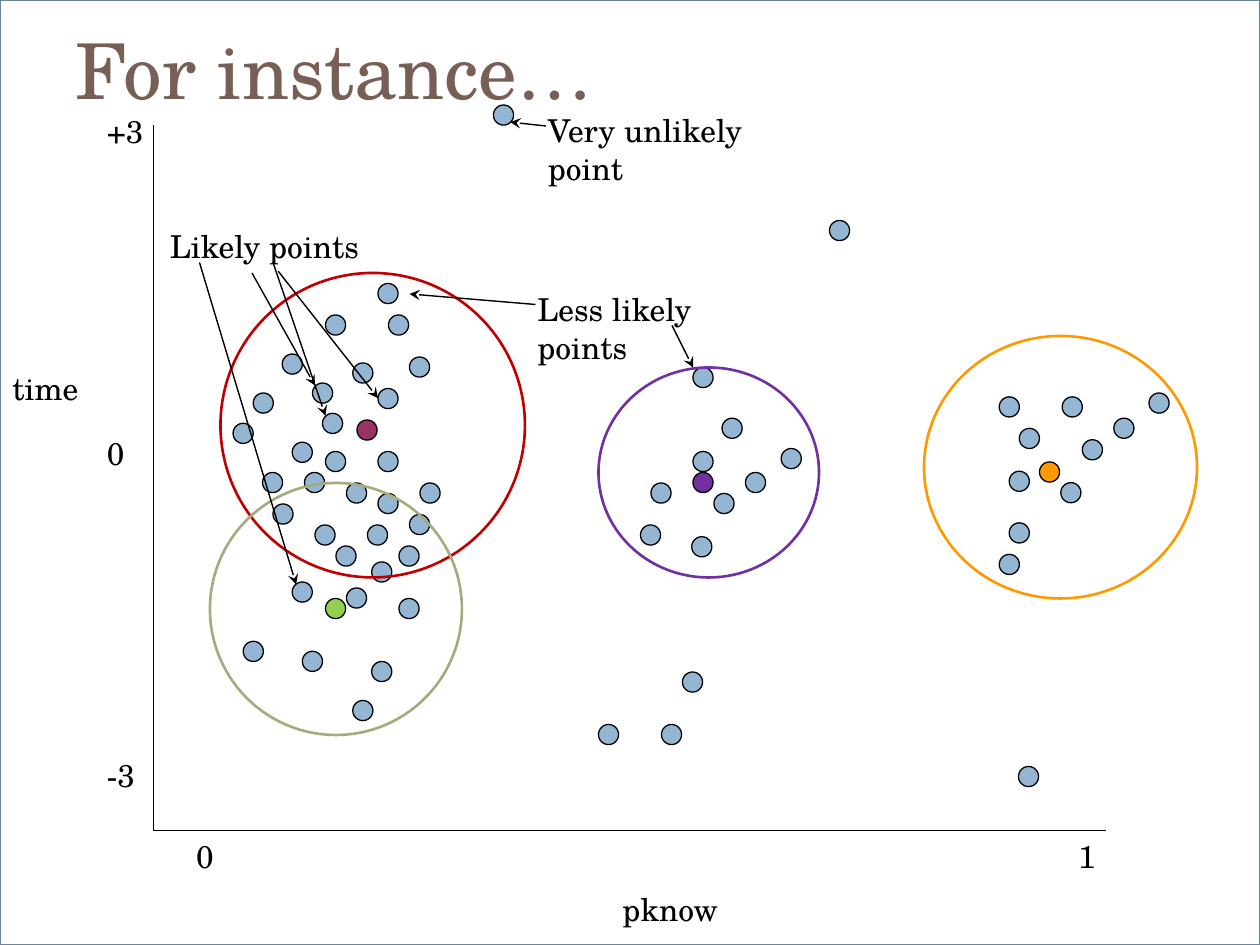
from pptx import Presentation
from pptx.dml.color import RGBColor
from pptx.enum.shapes import MSO_CONNECTOR as CONN, MSO_SHAPE as SHAPE
from pptx.enum.text import MSO_ANCHOR as ANCHOR, PP_ALIGN as ALIGN
from pptx.oxml.ns import qn
from pptx.util import Pt
from lxml.etree import SubElement

BLACK = RGBColor(0x00, 0x00, 0x00)
WHITE = RGBColor(0xFF, 0xFF, 0xFF)
BROWN = RGBColor(0x77, 0x5F, 0x55)
SLATE = RGBColor(0x6C, 0x84, 0x99)
BLUE = RGBColor(0x94, 0xB6, 0xD2)
RED = RGBColor(0xC0, 0x00, 0x00)
SAGE = RGBColor(0xA5, 0xAB, 0x81)
PURPLE = RGBColor(0x70, 0x30, 0xA0)
ORANGE = RGBColor(0xFF, 0x99, 0x00)
PLUM = RGBColor(0x99, 0x33, 0x66)
GREEN = RGBColor(0x92, 0xD0, 0x50)

FONT = "TeX Gyre Schola"
DOT = 11.5
ORIGIN = (87.6, 474.5)

LEFT_POINTS = [
    (228, 312), (192, 312), (198, 336), (234, 294), (228, 342), (210, 300),
    (156, 288), (174, 270), (150, 270), (222, 180), (186, 180), (234, 204),
    (198, 276), (216, 162), (216, 258), (240, 276), (186, 258), (201.6, 400.3),
    (212.4, 378), (139, 366.5), (167, 332.6), (212.4, 321.1), (172.8, 372.2),
    (178.6, 218.9), (161.3, 202.3), (133.2, 241.9), (144.7, 224.6),
    (167, 252.7), (201.6, 207.4), (216, 282), (184.3, 236.2), (216, 222),
    (180, 300),
]
MIDDLE_POINTS = [
    (372, 276), (366, 300), (408, 282), (426, 270), (396, 258),
    (395.3, 306.7), (446.4, 256.3), (396, 210), (412.6, 239),
]
RIGHT_POINTS = [
    (571, 316.8), (571, 226.8), (582.5, 244.8), (576.7, 269.3),
    (618.5, 251.3), (576.7, 298.8), (636.5, 239), (607, 226.8),
    (606.2, 275.8), (656.6, 224.6),
]
OUTLIERS = [
    (282, 60), (342, 414), (378, 414), (390, 384), (582, 438), (474, 126),
]
CENTRES = [
    (204, 240, PLUM), (186, 342, GREEN), (594, 264, ORANGE), (396, 270, PURPLE),
]
CLUSTERS = [
    (126, 156, 174, 174, RED), (120, 276, 144, 144, SAGE),
    (342, 210, 126, 120, PURPLE), (528, 192, 156, 150, ORANGE),
]
LABELS = [
    ("time", 0, 207.5, 60), ("Likely points", 90, 126, 138),
    ("Less likely points", 300, 162, 138),
    ("Very unlikely point", 306, 60, 156),
]
ARROWS = [
    (144, 156, 180, 220.3), (156, 150, 186, 237.6), (159, 155, 216, 227.5),
    (306, 174, 234, 168), (384, 186, 396, 210), (312, 72, 291.6, 69.8),
    (114, 150, 169.2, 334),
]


def style_font(font, size=18, color=BLACK):
    for name, value in {"name": FONT, "size": Pt(size)}.items():
        setattr(font, name, value)
    font.color.rgb = color


def add_shape(s, kind, x, y, w, h, line, width, fill=None):
    sp = s.shapes.add_shape(kind, Pt(x), Pt(y), Pt(w), Pt(h))
    sp.shadow.inherit = False
    if fill is None:
        sp.fill.background()
    else:
        sp.fill.solid()
        sp.fill.fore_color.rgb = fill
    sp.line.color.rgb = line
    sp.line.width = Pt(width)


def add_dot(s, x, y, fill=BLUE):
    add_shape(s, SHAPE.OVAL, x, y, DOT, DOT, BLACK, 0.75, fill)


def add_line(s, x1, y1, x2, y2, arrow=False):
    c = s.shapes.add_connector(CONN.STRAIGHT, Pt(x1), Pt(y1), Pt(x2), Pt(y2))
    c.line.color.rgb = BLACK
    c.line.width = Pt(0.79 if arrow else 0.75)
    if arrow:
        SubElement(c.line._get_or_add_ln(), qn("a:tailEnd"), type="stealth")
    SubElement(c._element.spPr, qn("a:effectLst"))


def add_text(s, lines, x, y, w, h=29, gap=0):
    tf = s.shapes.add_textbox(Pt(x), Pt(y), Pt(w), Pt(h)).text_frame
    tf.word_wrap = True
    for i, line in enumerate(lines):
        p = tf.add_paragraph() if i else tf.paragraphs[0]
        p.space_before = Pt(gap if i else 0)
        r = p.add_run()
        r.text = line
        style_font(r.font)
    return tf


def add_axes(s):
    x, y = ORIGIN
    add_line(s, x, 71.3, x, y)
    add_line(s, x, y, 632, y)
    add_text(s, ["+3", "0", "-3"], 54, 60.5, 45, 419, gap=162.4)
    tf = add_text(s, ["0\t1", "pknow"], 105, y, 556, 61, gap=9)
    scale, name = tf.paragraphs
    tabs = SubElement(scale._p.get_or_add_pPr(), qn("a:tabLst"))
    SubElement(tabs, qn("a:tab"), pos=str(Pt(504)), algn="l")
    name.alignment = ALIGN.CENTER


def set_title(s, text):
    sp = s.shapes.title
    box = {"left": Pt(36), "top": Pt(-6), "width": Pt(648), "height": Pt(90)}
    for name, value in box.items():
        setattr(sp, name, value)
    tf = sp.text_frame
    tf.vertical_anchor = ANCHOR.MIDDLE
    p = tf.paragraphs[0]
    p.alignment = ALIGN.LEFT
    r = p.add_run()
    r.text = text
    style_font(r.font, 44, BROWN)
    s.shapes._spTree.append(sp._element)


def main():
    prs = Presentation()
    prs.slide_width, prs.slide_height = Pt(720), Pt(540)
    s = prs.slides.add_slide(prs.slide_layouts[5])
    add_shape(s, SHAPE.RECTANGLE, 0, 0, 720, 540, SLATE, 1.5, WHITE)
    add_axes(s)
    for x, y in LEFT_POINTS + MIDDLE_POINTS + RIGHT_POINTS + OUTLIERS:
        add_dot(s, x, y)
    for centre in CENTRES:
        add_dot(s, *centre)
    for x, y, w, h, color in CLUSTERS:
        add_shape(s, SHAPE.OVAL, x, y, w, h, color, 1.5)
    set_title(s, "For instance…")
    for text, x, y, w in LABELS:
        add_text(s, [text], x, y, w)
    for ends in ARROWS:
        add_line(s, *ends, arrow=True)
    prs.save("out.pptx")


if __name__ == "__main__":
    main()
